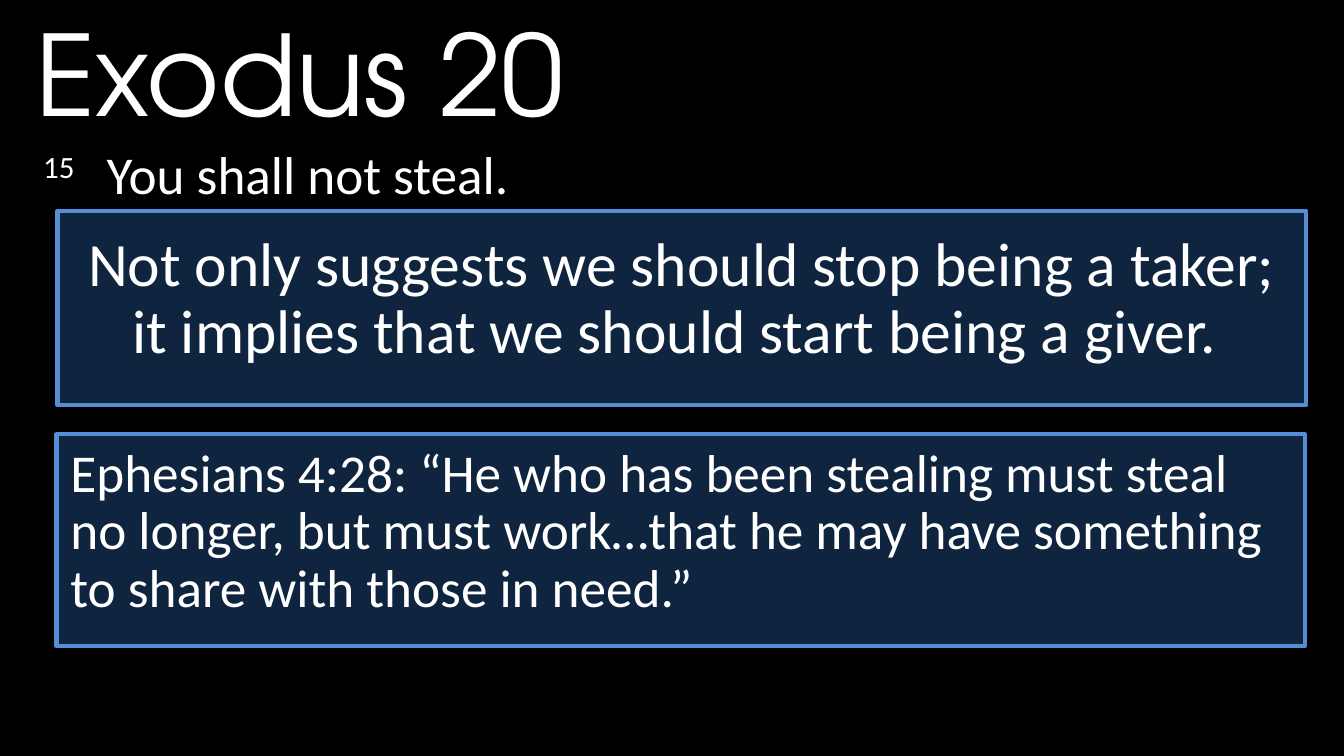
from pptx import Presentation
from pptx.dml.color import RGBColor
from pptx.enum import shapes, text
from pptx.util import Inches, Pt


def color(value):
    return RGBColor.from_string(value)


def add_text(left, top, width, height, parts, size, font="Calibri", spacing=0.9):
    box = page.shapes.add_textbox(Inches(left), Inches(top), Inches(width), Inches(height))
    box.text_frame.word_wrap = True
    para = box.text_frame.paragraphs[0]
    para.line_spacing = spacing
    para.font.size = Pt(size)
    para.font.name = font
    para.font.color.rgb = color("FFFFFF")
    for part in parts:
        para.add_run().text = part
    return para


deck = Presentation()
deck.slide_width = Inches(13.33)
deck.slide_height = Inches(7.5)
page = deck.slides.add_slide(deck.slide_layouts[6])
page.background.fill.solid()
page.background.fill.fore_color.rgb = color("000000")

verse = add_text(0.33, 1.42, 12.62, 0.68, ["15\u00a0\t", "You shall not steal."], 38)
verse_format = verse._p.get_or_add_pPr()
verse_format.set("marL", str(Inches(0.63)))
verse_format.set("indent", str(Inches(-0.63)))
verse.runs[0]._r.get_or_add_rPr().set("baseline", "30000")

add_text(0.25, 0, 12, 1.45, ["Exodus 20"], 80, "TeX Gyre Adventor", 1.0)

for left, top, height in [(0.57, 2.09, 1.93), (0.56, 4.31, 2.1)]:
    panel = page.shapes.add_shape(
        shapes.MSO_SHAPE.RECTANGLE, Inches(left), Inches(top), Inches(12.38), Inches(height)
    )
    panel.shadow.inherit = False
    panel.fill.solid()
    panel.fill.fore_color.rgb = color("0F243E")
    panel.line.color.rgb = color("558ED5")
    panel.line.width = Pt(3)

lesson = add_text(
    0.58, 2.27, 12.36, 1.43,
    ["Not only suggests we should stop being a taker; "
     "it implies that we should start being a giver. "],
    44,
)
lesson.alignment = text.PP_ALIGN.CENTER

quote = add_text(
    0.59, 4.38, 12.36, 1.83,
    ["Ephesians 4:28: “He who has been stealing must steal no longer, "
     "but must work…that he may have something to share with those in need.”"],
    38,
)

for para in (lesson, quote):
    para._p.get_or_add_pPr().set("marL", str(Inches(0.01)))

deck.save("out.pptx")
